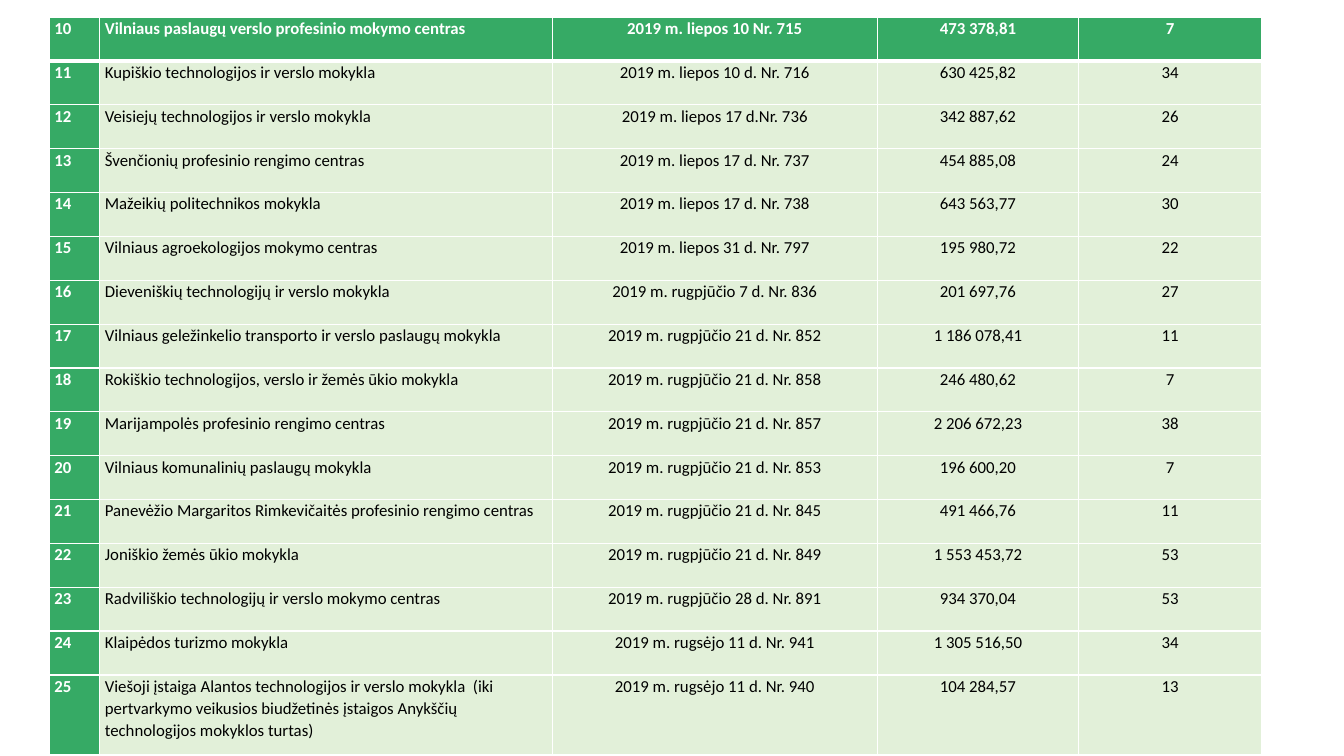
from lxml.etree import SubElement
from pptx import Presentation
from pptx.dml.color import RGBColor
from pptx.enum.text import PP_ALIGN
from pptx.oxml.ns import qn
from pptx.util import Inches, Pt

GREEN, PALE, WHITE, BLACK = "36AA65", "E2F0D9", "FFFFFF", "000000"
COLUMN_WIDTHS = [0.5, 4.49, 3.22, 2, 1.81]
ROW_HEIGHT = 6.53 / 15
LAST_ROW_HEIGHT = 0.79
FIRST_NUMBER = 10
SCHOOLS = [
    ("Vilniaus paslaugų verslo profesinio mokymo centras", "2019 m. liepos 10 Nr. 715", "473 378,81", 7),
    ("Kupiškio technologijos ir verslo mokykla", "2019 m. liepos 10 d. Nr. 716", "630 425,82", 34),
    ("Veisiejų technologijos ir verslo mokykla", "2019 m. liepos 17 d.Nr. 736", "342 887,62", 26),
    ("Švenčionių profesinio rengimo centras", "2019 m. liepos 17 d. Nr. 737", "454 885,08", 24),
    ("Mažeikių politechnikos mokykla", "2019 m. liepos 17 d. Nr. 738", "643 563,77", 30),
    ("Vilniaus agroekologijos mokymo centras", "2019 m. liepos 31 d. Nr. 797", "195 980,72", 22),
    ("Dieveniškių technologijų ir verslo mokykla", "2019 m. rugpjūčio 7 d. Nr. 836", "201 697,76", 27),
    ("Vilniaus geležinkelio transporto ir verslo paslaugų mokykla", "2019 m. rugpjūčio 21 d. Nr. 852",
     "1 186 078,41", 11),
    ("Rokiškio technologijos, verslo ir žemės ūkio mokykla", "2019 m. rugpjūčio 21 d. Nr. 858", "246 480,62", 7),
    ("Marijampolės profesinio rengimo centras", "2019 m. rugpjūčio 21 d. Nr. 857", "2 206 672,23", 38),
    ("Vilniaus komunalinių paslaugų mokykla", "2019 m. rugpjūčio 21 d. Nr. 853", "196 600,20", 7),
    ("Panevėžio Margaritos Rimkevičaitės profesinio rengimo centras", "2019 m. rugpjūčio 21 d. Nr. 845",
     "491 466,76", 11),
    ("Joniškio žemės ūkio mokykla", "2019 m. rugpjūčio 21 d. Nr. 849", "1 553 453,72", 53),
    ("Radviliškio technologijų ir verslo mokymo centras", "2019 m. rugpjūčio 28 d. Nr. 891", "934 370,04", 53),
    ("Klaipėdos turizmo mokykla", "2019 m. rugsėjo 11 d. Nr. 941", "1 305 516,50", 34),
    ("Viešoji įstaiga Alantos technologijos ir verslo mokykla  (iki pertvarkymo veikusios biudžetinės "
     "įstaigos Anykščių technologijos mokyklos turtas)", "2019 m. rugsėjo 11 d. Nr. 940", "104 284,57", 13),
]


def rgb(value):
    return RGBColor.from_string(value)


def set_borders(cell, top=1, bottom=1):
    tc_pr = cell._tc.get_or_add_tcPr()
    for tag, width in (("a:lnL", 1), ("a:lnR", 1), ("a:lnT", top), ("a:lnB", bottom)):
        ln = SubElement(tc_pr, qn(tag), w=str(Pt(width)))
        fill = SubElement(ln, qn("a:solidFill"))
        SubElement(fill, qn("a:srgbClr"), val=WHITE)


def fill_cell(cell, text, strong, centred):
    cell.margin_left = cell.margin_right = Inches(0.05)
    cell.margin_top = cell.margin_bottom = 0
    cell.fill.solid()
    cell.fill.fore_color.rgb = rgb(GREEN if strong else PALE)
    cell.text_frame.text = text
    p = cell.text_frame.paragraphs[0]
    p.line_spacing = 1.07
    p.alignment = PP_ALIGN.CENTER if centred else PP_ALIGN.LEFT
    font = p.runs[0].font
    font.name = "Calibri"
    font.size = Pt(12)
    font.bold = strong
    font.color.rgb = rgb(WHITE if strong else BLACK)


def add_school_table(s):
    row_count = len(SCHOOLS)
    heights = [ROW_HEIGHT] * (row_count - 1) + [LAST_ROW_HEIGHT]
    frame = s.shapes.add_table(row_count, len(COLUMN_WIDTHS), Inches(0.49), Inches(0.17),
                               Inches(sum(COLUMN_WIDTHS)), Inches(sum(heights)))
    table = frame.table
    table.first_col = True
    table.horz_banding = False
    for column, width in zip(table.columns, COLUMN_WIDTHS):
        column.width = Inches(width)
    for row, height in zip(table.rows, heights):
        row.height = Inches(height)
    for i, school in enumerate(SCHOOLS):
        for j, value in enumerate((FIRST_NUMBER + i, *school)):
            cell = table.cell(i, j)
            set_borders(cell, top=3 if i == 1 else 1, bottom=3 if i == 0 else 1)
            fill_cell(cell, str(value), strong=i == 0 or j == 0, centred=j > 1)


def main():
    prs = Presentation()
    prs.slide_width = Inches(13.33)
    prs.slide_height = Inches(7.5)
    s = prs.slides.add_slide(prs.slide_layouts[6])
    add_school_table(s)
    prs.save("out.pptx")


if __name__ == "__main__":
    main()
